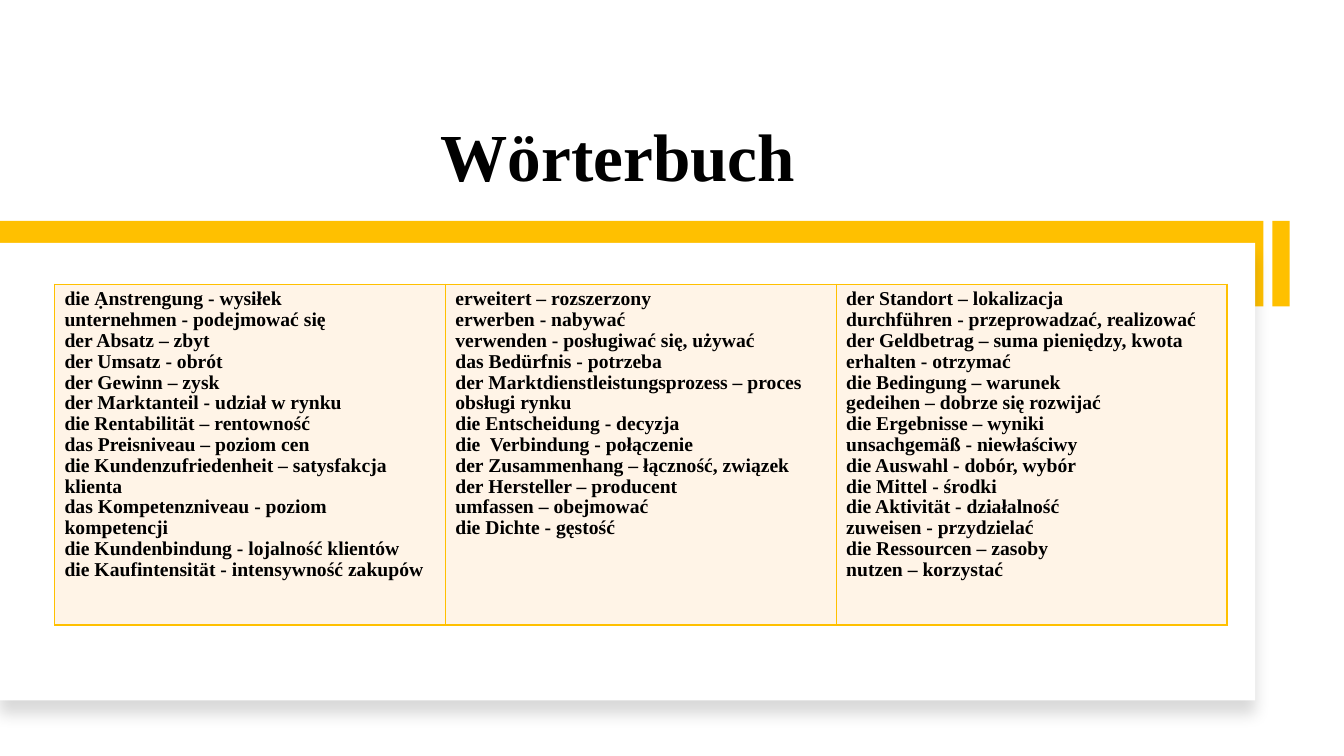
from dataclasses import dataclass

from lxml import etree
from pptx import Presentation
from pptx import util as u
from pptx.dml.color import RGBColor
from pptx.enum import shapes, text
from pptx.oxml import ns


@dataclass(frozen=True)
class Theme:
    font: str = "Times New Roman"
    ink: str = "000000"
    accent: str = "FFC000"
    panel: str = "FFFFFF"
    cell: str = "FFF4E7"
    title_size: float = 48
    body_size: float = 14
    border: float = 1


VOCABULARY = [
    [
        "die Ạnstrengung - wysiłek",
        "unternehmen - podejmować się",
        "der Absatz – zbyt",
        "der Umsatz - obrót",
        "der Gewinn – zysk",
        "der Marktanteil - udział w rynku",
        "die Rentabilität – rentowność",
        "das Preisniveau – poziom cen",
        "die Kundenzufriedenheit – satysfakcja klienta",
        "das Kompetenzniveau - poziom kompetencji",
        "die Kundenbindung - lojalność klientów",
        "die Kaufintensität - intensywność zakupów",
    ],
    [
        "erweitert – rozszerzony",
        "erwerben - nabywać",
        "verwenden - posługiwać się, używać",
        "das Bedürfnis - potrzeba",
        "der Marktdienstleistungsprozess – proces obsługi rynku",
        "die Entscheidung - decyzja",
        "die  Verbindung - połączenie",
        "der Zusammenhang – łączność, związek",
        "der Hersteller – producent",
        "umfassen – obejmować",
        "die Dichte - gęstość",
    ],
    [
        "der Standort – lokalizacja",
        "durchführen - przeprowadzać, realizować",
        "der Geldbetrag – suma pieniędzy, kwota",
        "erhalten - otrzymać",
        "die Bedingung – warunek",
        "gedeihen – dobrze się rozwijać",
        "die Ergebnisse – wyniki",
        "unsachgemäß - niewłaściwy",
        "die Auswahl - dobór, wybór",
        "die Mittel - środki",
        "die Aktivität - działalność",
        "zuweisen - przydzielać",
        "die Ressourcen – zasoby",
        "nutzen – korzystać",
    ],
]


class SlideBuilder:
    def __init__(self, slide, theme):
        self.s = slide
        self.theme = theme

    def style(self, tf, size, spacing):
        for p in tf.paragraphs:
            p.line_spacing = spacing
            for r in p.runs:
                r.font.name = self.theme.font
                r.font.size = u.Pt(size)
                r.font.bold = True
                r.font.color.rgb = RGBColor.from_string(self.theme.ink)

    def title(self, words, left, top, width, height):
        sp = self.s.shapes.title
        sp.left, sp.top = u.Inches(left), u.Inches(top)
        sp.width, sp.height = u.Inches(width), u.Inches(height)
        tf = sp.text_frame
        tf.text = words
        tf.vertical_anchor = text.MSO_ANCHOR.BOTTOM
        tf.paragraphs[0].alignment = text.PP_ALIGN.CENTER
        self.style(tf, self.theme.title_size, 0.9)

    def rect(self, parent, color, left, top, width, height, rotation=0):
        sp = parent.shapes.add_shape(
            shapes.MSO_SHAPE.RECTANGLE,
            u.Inches(left), u.Inches(top), u.Inches(width), u.Inches(height))
        sp.rotation = rotation
        sp.shadow.inherit = False
        sp.fill.solid()
        sp.fill.fore_color.rgb = RGBColor.from_string(color)
        sp.line.fill.background()
        return sp

    def drop_shadow(self, sp, blur, distance, angle, opacity):
        effects = sp.element.spPr.find(ns.qn("a:effectLst"))
        shadow = etree.SubElement(
            effects, ns.qn("a:outerShdw"), blurRad=str(u.Pt(blur)),
            dist=str(u.Pt(distance)), dir=str(angle * 60000),
            algn="t", rotWithShape="0")
        color = etree.SubElement(shadow, ns.qn("a:srgbClr"), val=self.theme.ink)
        etree.SubElement(color, ns.qn("a:alpha"), val=str(opacity * 1000))

    def cell_borders(self, cell):
        tcPr = cell._tc.get_or_add_tcPr()
        for i, side in enumerate(("a:lnL", "a:lnR", "a:lnT", "a:lnB")):
            ln = etree.Element(ns.qn(side), w=str(u.Pt(self.theme.border)))
            fill = etree.SubElement(ln, ns.qn("a:solidFill"))
            etree.SubElement(fill, ns.qn("a:srgbClr"), val=self.theme.accent)
            tcPr.insert(i, ln)

    def table(self, columns, left, top, width, height):
        tbl = self.s.shapes.add_table(
            1, len(columns), u.Inches(left), u.Inches(top),
            u.Inches(width), u.Inches(height)).table
        tbl.first_row = tbl.horz_banding = False
        for cell, entries in zip(tbl.rows[0].cells, columns):
            cell.text_frame.text = "\n".join(entries)
            self.style(cell.text_frame, self.theme.body_size, 0.96)
            cell.fill.solid()
            cell.fill.fore_color.rgb = RGBColor.from_string(self.theme.cell)
            self.cell_borders(cell)


def main():
    prs = Presentation()
    prs.slide_width, prs.slide_height = u.Inches(13.33), u.Inches(7.5)
    theme = Theme()
    s = prs.slides.add_slide(prs.slide_layouts[5])
    b = SlideBuilder(s, theme)

    b.title("Wörterbuch", 1.08, 0.7, 10.1, 1.3)
    bars = s.shapes.add_group_shape()
    b.rect(bars, theme.accent, 12.28, 2.53, 0.85, 0.17, rotation=90)
    b.rect(bars, theme.accent, 0, 2.19, 12.53, 0.85)
    panel = b.rect(s, theme.panel, 0, 2.41, 12.45, 4.54)
    b.drop_shadow(panel, blur=11, distance=10, angle=90, opacity=15)
    b.table(VOCABULARY, 0.54, 2.82, 11.63, 3.38)

    prs.save("out.pptx")


if __name__ == "__main__":
    main()
